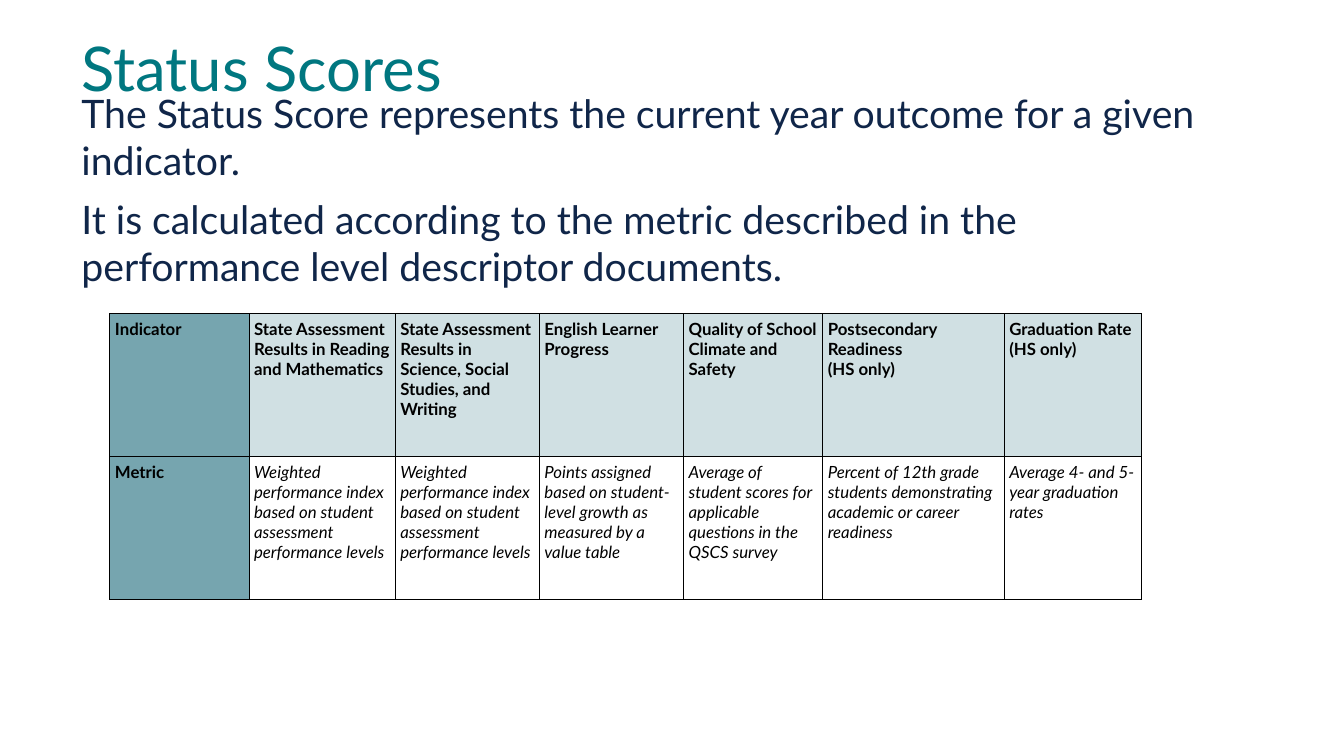
from dataclasses import dataclass

from lxml import etree
from pptx import Presentation
from pptx.dml.color import RGBColor
from pptx.enum.text import MSO_ANCHOR
from pptx.oxml.ns import qn
from pptx.util import Emu, Inches, Pt

TOP = MSO_ANCHOR.TOP
MIDDLE = MSO_ANCHOR.MIDDLE
BLANK_LAYOUT = 6
FONT = "Lato"

# Slide grid: square cells, 10 to the inch
SLIDE_COLUMNS = 133.3
SLIDE_ROWS = 75
CELL_PADDING = 0.5
BORDER_WIDTH = 0.67

TEAL, NAVY, BLACK = "007780", "102649", "000000"
LABEL_FILL, HEADER_FILL = "76A5AF", "D0E0E3"


@dataclass(frozen=True)
class Indicator:
    name: str
    metric: str
    width: float


WEIGHTED_INDEX = "Weighted performance index based on student assessment performance levels"
INDICATORS = [
    Indicator("Indicator", "Metric", 13.8),
    Indicator("State Assessment Results in Reading and Mathematics", WEIGHTED_INDEX, 14.5),
    Indicator("State Assessment Results in Science, Social Studies, and Writing",
              WEIGHTED_INDEX, 14.3),
    Indicator("English Learner Progress",
              "Points assigned based on student-level growth as measured by a value table", 14.3),
    Indicator("Quality of School Climate and Safety",
              "Average of student scores for applicable questions in the QSCS survey", 13.8),
    Indicator("Postsecondary Readiness\n(HS only)",
              "Percent of 12th grade students demonstrating academic or career readiness", 18),
    Indicator("Graduation Rate\n(HS only)", "Average 4- and 5-year graduation rates", 13.6),
]
STATEMENTS = "\n".join([
    "The Status Score represents the current year outcome for a given indicator.",
    "It is calculated according to the metric described in the "
    "performance level descriptor documents.",
])


def grid(cells: float) -> Emu:
    return Inches(cells / 10)


def colour(value: str) -> RGBColor:
    return RGBColor.from_string(value)


def write(text_frame, text: str, *, size: float, color: str = BLACK, bold: bool = False,
          italic: bool = False, spacing: float = 1.0, gap: float = 0) -> None:
    """Write one paragraph for each line of text, with a gap between them."""
    text_frame.word_wrap = True
    for index, line in enumerate(text.split("\n")):
        paragraph = text_frame.add_paragraph() if index else text_frame.paragraphs[0]
        paragraph.line_spacing = spacing
        paragraph.space_before = Pt(gap if index else 0)
        run = paragraph.add_run()
        run.text = line
        run.font.name = FONT
        run.font.size = Pt(size)
        run.font.bold = bold
        run.font.italic = italic
        run.font.color.rgb = colour(color)


def add_text(slide, left: float, top: float, width: float, height: float, text: str, *,
             anchor=TOP, **text_format) -> None:
    shape = slide.shapes.add_textbox(grid(left), grid(top), grid(width), grid(height))
    shape.text_frame.vertical_anchor = anchor
    write(shape.text_frame, text, **text_format)


def add_borders(cell) -> None:
    properties = cell._tc.get_or_add_tcPr()
    for position, side in enumerate(("lnL", "lnR", "lnT", "lnB")):
        line = etree.Element(qn(f"a:{side}"), w=str(Pt(BORDER_WIDTH)))
        fill = etree.SubElement(line, qn("a:solidFill"))
        etree.SubElement(fill, qn("a:srgbClr"), val=BLACK)
        properties.insert(position, line)


def fill_cell(cell, text: str, fill: str | None, bold: bool) -> None:
    cell.margin_left = cell.margin_right = grid(CELL_PADDING)
    cell.margin_top = cell.margin_bottom = grid(CELL_PADDING)
    cell.vertical_anchor = TOP
    if fill:
        cell.fill.solid()
        cell.fill.fore_color.rgb = colour(fill)
    else:
        cell.fill.background()
    add_borders(cell)
    write(cell.text_frame, text, size=12, bold=bold, italic=not bold)


def add_indicator_table(slide, left: float, top: float, row_height: float) -> None:
    total_width = sum(indicator.width for indicator in INDICATORS)
    table = slide.shapes.add_table(2, len(INDICATORS), grid(left), grid(top),
                                   grid(total_width), grid(2 * row_height)).table
    table.first_row = table.horz_banding = False
    for row in table.rows:
        row.height = grid(row_height)
    for index, indicator in enumerate(INDICATORS):
        is_label = index == 0
        table.columns[index].width = grid(indicator.width)
        fill_cell(table.cell(0, index), indicator.name,
                  LABEL_FILL if is_label else HEADER_FILL, True)
        fill_cell(table.cell(1, index), indicator.metric,
                  LABEL_FILL if is_label else None, is_label)


def main() -> None:
    presentation = Presentation()
    presentation.slide_width = grid(SLIDE_COLUMNS)
    presentation.slide_height = grid(SLIDE_ROWS)
    slide = presentation.slides.add_slide(presentation.slide_layouts[BLANK_LAYOUT])

    # Title
    add_text(slide, 7.1, 1.5, 115, 11.3, "Status Scores",
             anchor=MIDDLE, size=44, color=TEAL, spacing=0.9)
    # Indicators and their metrics
    add_indicator_table(slide, 10.9, 31.1, 14.2)
    # Explanation
    add_text(slide, 7.1, 8.4, 117, 27, STATEMENTS, size=28, color=NAVY, gap=8)

    presentation.save("out.pptx")


if __name__ == "__main__":
    main()
